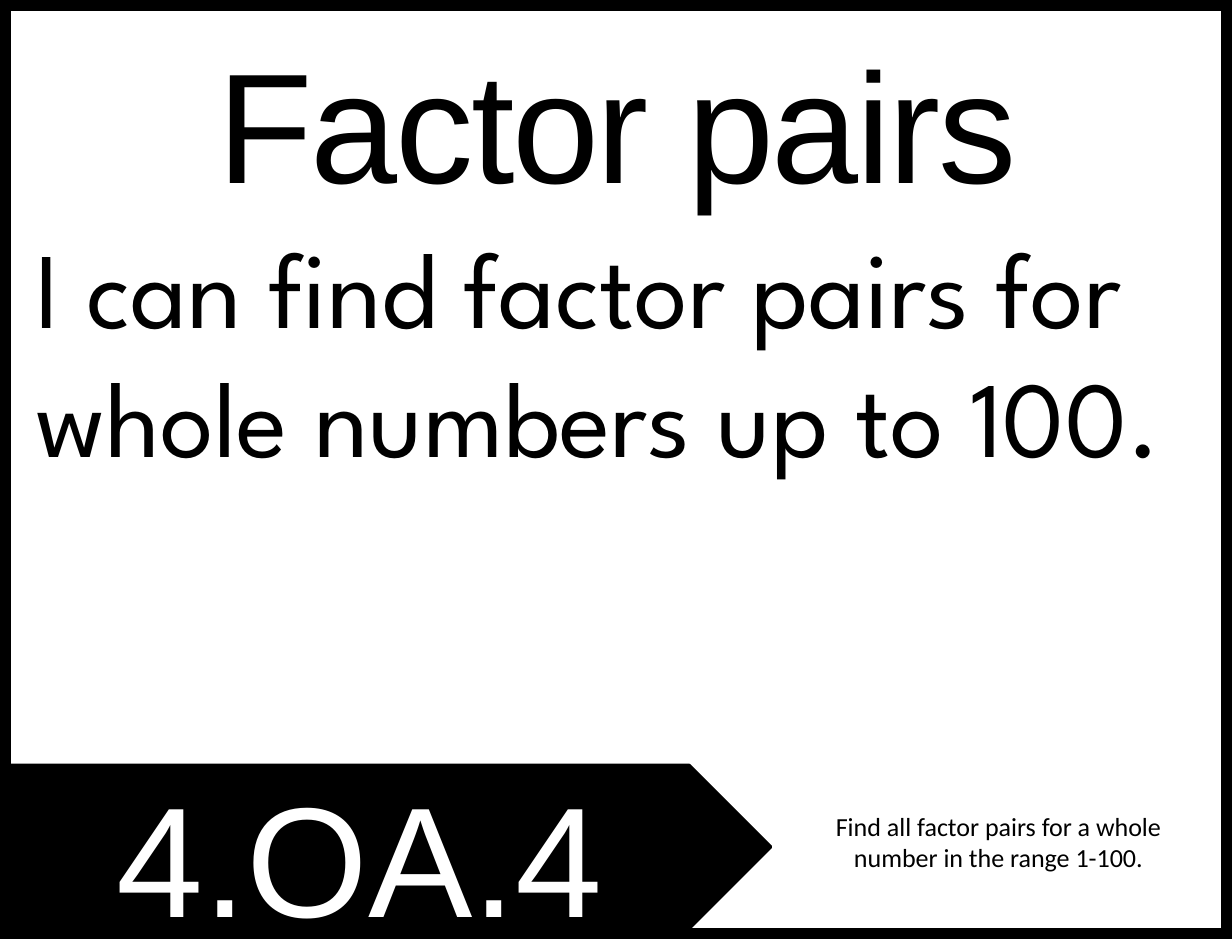
from pptx import Presentation
from pptx.dml.color import RGBColor
from pptx.enum.shapes import MSO_SHAPE as SHAPE
from pptx.enum.text import PP_ALIGN as ALIGN
from pptx.util import Inches, Pt

BLACK = RGBColor(0, 0, 0)
WHITE = RGBColor(255, 255, 255)
W, H = 10.5, 8


def add_box(slide, kind, box, line_width, fill=None):
    """Black-outlined preset shape, hollow unless a fill is given."""
    sp = slide.shapes.add_shape(kind, *map(Inches, box))
    sp.shadow.inherit = False
    if fill is None:
        sp.fill.background()
    else:
        sp.fill.solid()
        sp.fill.fore_color.rgb = fill
    sp.line.color.rgb = BLACK
    sp.line.width = Pt(line_width)
    return sp


def add_text(slide, box, text, font, size, color=BLACK, align=ALIGN.CENTER):
    """Wrapped text box holding one paragraph."""
    tf = slide.shapes.add_textbox(*map(Inches, box)).text_frame
    tf.word_wrap = True
    p = tf.paragraphs[0]
    p.text = text
    p.alignment = align
    p.font.name, p.font.size = font, Pt(size)
    p.font.color.rgb = color
    return p


def add_goal(slide, box):
    """Topic heading with the learning goal below it."""
    x, y, w, h = box
    title = add_text(slide, (x, y, w, 0.24 * h), "Factor pairs", "Arial", 96)
    title.runs[0].font._element.set("spc", "-150")  # tighter letters
    add_text(slide, (x + 0.19, y + 0.33 * h, w - 0.35, 0.18 * h),
             "I can find factor pairs for whole numbers up to 100.",
             "League Spartan", 66, align=ALIGN.LEFT)


def add_standard(slide, box):
    """Pennant with the standard's code, and its wording to the right."""
    x, y, w, h = box
    add_box(slide, SHAPE.PENTAGON, (x, y, 0.63 * w, h), 2, BLACK)
    add_text(slide, (x + 0.04 * w, y - 0.09, 0.5 * w, 1.72),
             "4.OA.4", "Arial", 96, WHITE)
    add_text(slide, (x + 0.64 * w, y + 0.24 * h, 0.357 * w, 0.52 * h),
             "Find all factor pairs for a whole number in the range 1-100.",
             "Calibri", 16)


def main():
    prs = Presentation()
    prs.slide_width, prs.slide_height = Inches(W), Inches(H)
    slide = prs.slides.add_slide(prs.slide_layouts[6])

    # Page frame
    add_box(slide, SHAPE.RECTANGLE, (0.04, 0.04, W - 0.08, H - 0.08), 8)
    add_goal(slide, (0.01, 0.18, W, 5))
    add_standard(slide, (0.08, 6.52, 10.3, 1.39))

    prs.save("out.pptx")


if __name__ == "__main__":
    main()
